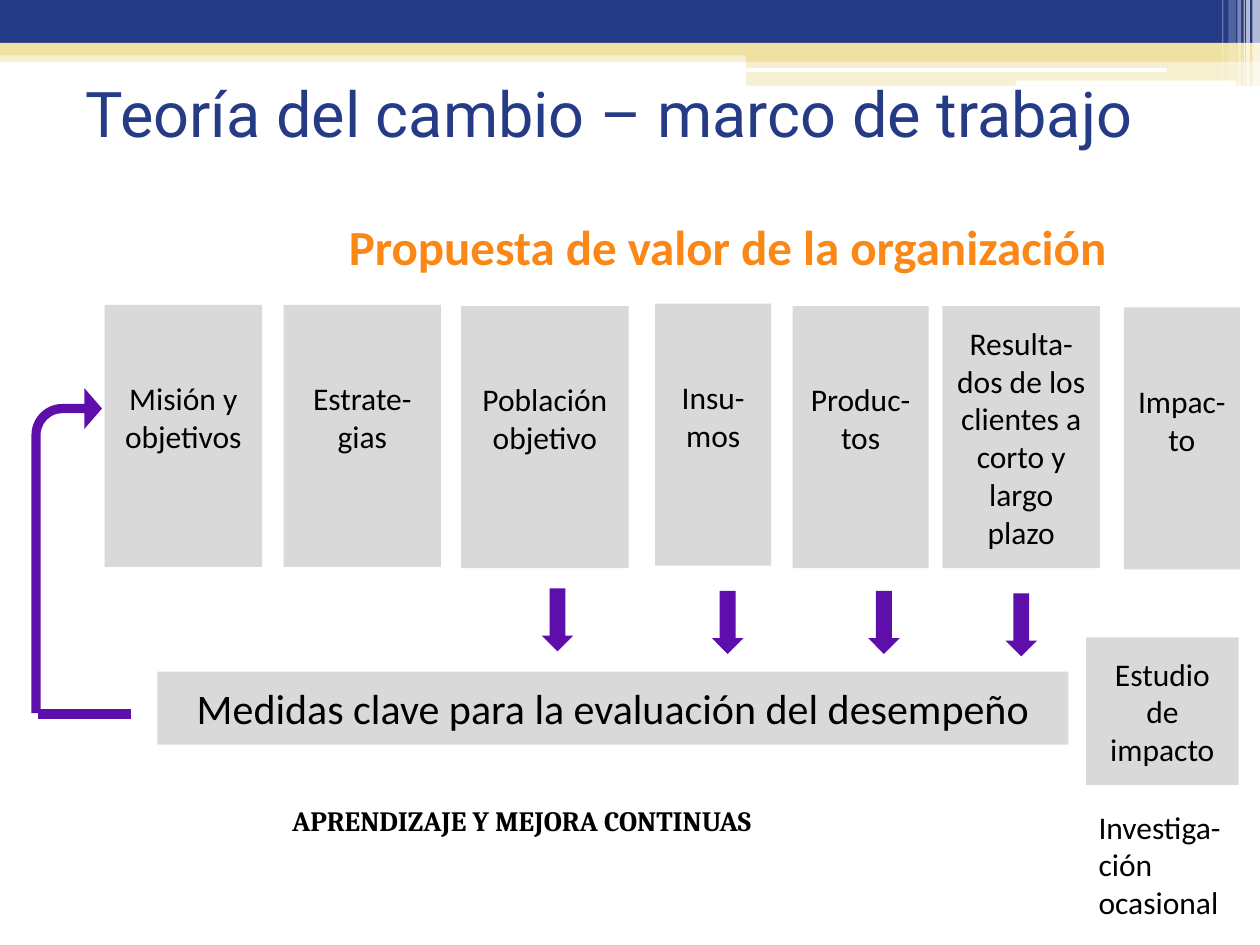
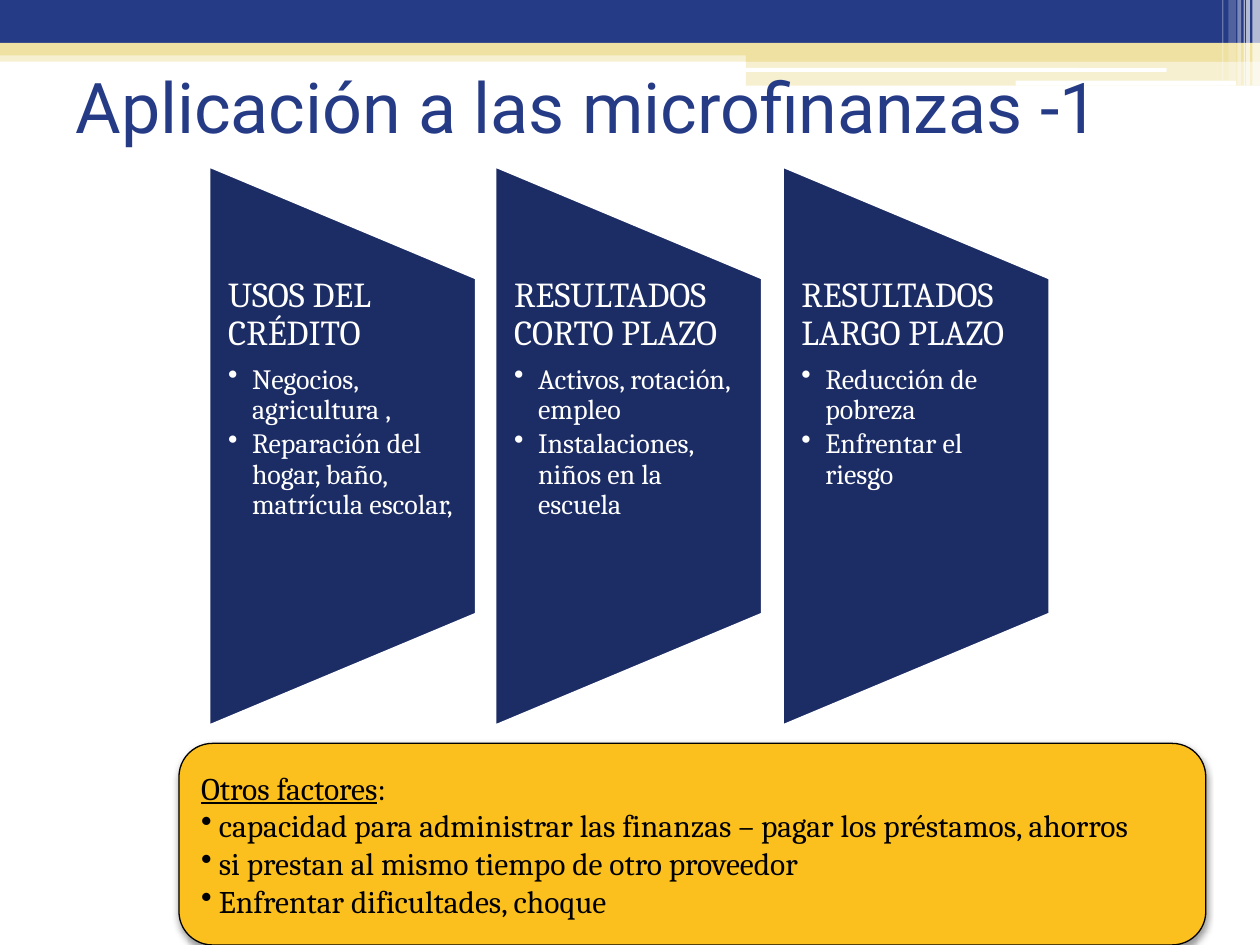
from dataclasses import dataclass

from lxml.etree import SubElement
from pptx import Presentation
from pptx.dml.color import RGBColor
from pptx.enum.shapes import MSO_SHAPE as Preset
from pptx.enum.text import MSO_ANCHOR as Anchor, MSO_AUTO_SIZE as AutoSize, PP_ALIGN as Align
from pptx.oxml.ns import qn
from pptx.util import Pt

EMU_PER_PX = 9144  # 100 px to the inch

NAVY = RGBColor(0x26, 0x3B, 0x86)
DARK_NAVY = RGBColor(0x1C, 0x2C, 0x64)
SAND = RGBColor(0xEF, 0xE1, 0xA2)
GRAY = RGBColor(0xD9, 0xD9, 0xD9)
PURPLE = RGBColor(0x5E, 0x0E, 0xAA)
ORANGE = RGBColor(0xFA, 0x87, 0x16)
AMBER = RGBColor(0xFB, 0xC0, 0x1E)
BLACK = RGBColor(0, 0, 0)
WHITE = RGBColor(0xFF, 0xFF, 0xFF)

TITLE_FONT, SANS, SERIF = "Roboto", "Calibri", "Cambria"
LINE_18PT = 30  # height of one 18 pt line


@dataclass(frozen=True)
class Box:
    left: int
    top: int
    width: int
    height: int

    def emu(self) -> list[int]:
        return [px(v) for v in (self.left, self.top, self.width, self.height)]


@dataclass(frozen=True)
class Band:
    box: Box
    color: RGBColor
    opacity: int = 100
    preset: Preset = Preset.RECTANGLE


@dataclass(frozen=True)
class Card:
    text: str
    box: Box
    size: int = 18
    lift: int = 0  # extra bottom margin that raises the text


@dataclass(frozen=True)
class Panel:
    heading: str
    points: tuple[str, ...]


BANDS = [
    Band(Box(0, 40, 1000, 9), SAND, 50),
    Band(Box(0, 0, 1000, 34), NAVY),
    Band(Box(0, 34, 1000, 10), SAND),
    Band(Box(592, 39, 408, 10), SAND),
    Band(Box(592, 48, 408, 20), SAND, 50),
    Band(Box(591, 54, 335, 3), WHITE, preset=Preset.ROUNDED_RECTANGLE),
    Band(Box(806, 64, 175, 4), WHITE, preset=Preset.ROUNDED_RECTANGLE),
    Band(Box(994, 0, 6, 68), WHITE, 65),
    Band(Box(989, 0, 3, 68), WHITE, 65),
    Band(Box(987, 0, 1, 68), WHITE, 60),
    Band(Box(982, 0, 3, 68), WHITE, 40),
    Band(Box(975, 0, 6, 64), WHITE, 20),
    Band(Box(970, 0, 1, 64), WHITE, 30),
]

CARDS = [
    Card("Misión y objetivos", Box(83, 242, 125, 208), lift=LINE_18PT),
    Card("Estrate-gias", Box(225, 242, 125, 208), lift=LINE_18PT),
    Card("Población objetivo", Box(366, 243, 133, 208), lift=LINE_18PT),
    Card("Insu-mos", Box(520, 241, 92, 208), lift=LINE_18PT),
    Card("Produc-tos", Box(629, 243, 108, 208), lift=LINE_18PT),
    Card("Resulta-dos de los clientes a corto y largo plazo", Box(748, 243, 125, 208)),
    Card("Impac-to", Box(892, 244, 92, 208), lift=LINE_18PT),
    Card("Medidas clave para la evaluación del desempeño", Box(125, 533, 723, 58), size=24),
    Card("Estudio de impacto", Box(862, 506, 121, 117)),
]

DOWN_ARROWS = [(430, 467), (565, 469), (689, 469), (798, 471)]

PANELS = [
    Panel("USOS DEL CRÉDITO",
          ("Negocios, agricultura ,", "Reparación del hogar, baño, matrícula escolar,")),
    Panel("RESULTADOS CORTO PLAZO",
          ("Activos, rotación, empleo", "Instalaciones, niños en la escuela")),
    Panel("RESULTADOS LARGO PLAZO",
          ("Reducción de pobreza", "Enfrentar el riesgo")),
]

OTHER_FACTORS = [
    "capacidad para administrar las finanzas – pagar los préstamos, ahorros",
    "si prestan al mismo tiempo de otro proveedor",
    "Enfrentar dificultades, choque",
]


def px(value: int) -> int:
    return value * EMU_PER_PX


def add_run(paragraph, text: str, font: str, size: int, color: RGBColor = BLACK, bold: bool = False):
    run = paragraph.add_run()
    run.text = text
    run.font.name, run.font.size, run.font.bold = font, Pt(size), bold
    run.font.color.rgb = color
    return run


def add_bullet(paragraph, indent: int) -> None:
    properties = paragraph._p.get_or_add_pPr()
    properties.set("marL", str(px(indent)))
    properties.set("indent", str(-px(indent)))
    SubElement(properties, qn("a:buChar"), char="•")


def add_preset(slide, preset: Preset, box: Box, color: RGBColor):
    shape = slide.shapes.add_shape(preset, *box.emu())
    shape.shadow.inherit = False
    shape.fill.solid()
    shape.fill.fore_color.rgb = color
    shape.line.fill.background()
    return shape


def add_label(slide, box: Box, text: str, font: str, size: int, color: RGBColor = BLACK,
              bold: bool = False, wrap: bool = False) -> None:
    frame = slide.shapes.add_textbox(*box.emu()).text_frame
    frame.word_wrap = wrap
    frame.auto_size = AutoSize.SHAPE_TO_FIT_TEXT
    add_run(frame.paragraphs[0], text, font, size, color, bold)


def add_card(slide, card: Card) -> None:
    frame = add_preset(slide, Preset.RECTANGLE, card.box, GRAY).text_frame
    frame.word_wrap = True
    frame.vertical_anchor = Anchor.MIDDLE
    frame.margin_bottom = px(5 + card.lift)
    paragraph = frame.paragraphs[0]
    paragraph.alignment = Align.CENTER
    add_run(paragraph, card.text, SANS, card.size)


def add_panel(slide, panel: Panel, offset: int) -> None:
    shape = add_preset(slide, Preset.FLOWCHART_MANUAL_OPERATION,
                       Box(50 + offset, 248, 444, 212), DARK_NAVY)
    shape.rotation = 270
    shape.line.color.rgb = WHITE
    shape.line.width = Pt(1.5)

    frame = slide.shapes.add_textbox(*Box(167 + offset, 220, 212, 267).emu()).text_frame
    frame.word_wrap = True
    frame.margin_left = frame.margin_right = px(14)
    frame.margin_top = frame.margin_bottom = 0
    heading = frame.paragraphs[0]
    heading.line_spacing, heading.space_after = 0.9, Pt(7)
    add_run(heading, panel.heading, SERIF, 20, WHITE)
    for point in panel.points:
        paragraph = frame.add_paragraph()
        paragraph.level = 1
        paragraph.line_spacing, paragraph.space_after = 0.9, Pt(2.4)
        add_bullet(paragraph, 19)
        add_run(paragraph, point, SERIF, 16, WHITE)


def add_soft_shadow(shape) -> None:
    effects = shape.element.spPr.find(qn("a:effectLst"))
    shadow = SubElement(effects, qn("a:outerShdw"), blurRad=str(Pt(4.1)), dist=str(Pt(2)),
                        dir="5400000", rotWithShape="0")
    color = SubElement(shadow, qn("a:srgbClr"), val=str(BLACK))
    SubElement(color, qn("a:alpha"), val="40000")


def add_other_factors(slide) -> None:
    shape = add_preset(slide, Preset.ROUNDED_RECTANGLE, Box(142, 590, 815, 160), AMBER)
    shape.line.color.rgb = BLACK
    shape.line.width = Pt(0.75)
    add_soft_shadow(shape)
    frame = shape.text_frame
    frame.word_wrap = True
    frame.vertical_anchor = Anchor.MIDDLE
    heading = frame.paragraphs[0]
    heading.alignment = Align.LEFT
    add_run(heading, "Otros factores", SERIF, 18).font.underline = True
    add_run(heading, ":", SERIF, 18)
    for factor in OTHER_FACTORS:
        paragraph = frame.add_paragraph()
        paragraph.alignment = Align.LEFT
        add_bullet(paragraph, 14)
        add_run(paragraph, factor, SERIF, 18)


def add_titled_slide(presentation, layout, title: str, box: Box, size: int):
    slide = presentation.slides.add_slide(layout)
    placeholder = slide.shapes.title
    placeholder.left, placeholder.top, placeholder.width, placeholder.height = box.emu()
    frame = placeholder.text_frame
    frame.word_wrap = True
    frame.auto_size = AutoSize.NONE
    frame.vertical_anchor = Anchor.MIDDLE
    paragraph = frame.paragraphs[0]
    paragraph.alignment = Align.LEFT
    add_run(paragraph, title, TITLE_FONT, size, NAVY)
    return slide


def move_bands_to_layout(slide, layout) -> None:
    """Draw the bands once and hand them to the layout, behind its placeholders."""
    for position, band in enumerate(BANDS, start=2):
        shape = add_preset(slide, band.preset, band.box, band.color)
        if band.opacity < 100:
            color = shape.element.spPr.find(qn("a:solidFill")).find(qn("a:srgbClr"))
            SubElement(color, qn("a:alpha"), val=str(band.opacity * 1000))
        layout.shapes.element.insert(position, shape.element)


def build_theory_slide(slide) -> None:
    add_label(slide, Box(267, 167, 629, 57), "Propuesta de valor de la organización",
              SANS, 28, ORANGE, bold=True)
    for card in CARDS:
        add_card(slide, card)
    add_label(slide, Box(222, 633, 484, 37), "APRENDIZAJE Y MEJORA CONTINUAS", SERIF, 16, bold=True)
    add_label(slide, Box(862, 636, 138, 101), "Investiga-ción ocasional", SANS, 18, wrap=True)

    # Feedback arrow and its foot
    feedback = add_preset(slide, Preset.BENT_ARROW, Box(25, 308, 56, 258), PURPLE)
    for index, value in enumerate((0.13, 0.29, 0.25, 0.44)):
        feedback.adjustments[index] = value
    add_preset(slide, Preset.MATH_MINUS, Box(17, 550, 100, 33), PURPLE)

    for left, top in DOWN_ARROWS:
        add_preset(slide, Preset.DOWN_ARROW, Box(left, top, 25, 50), PURPLE)


def build_microfinance_slide(slide) -> None:
    for index, panel in enumerate(PANELS):
        add_panel(slide, panel, index * 455 // 2)
    add_other_factors(slide)


def main() -> None:
    presentation = Presentation()
    presentation.slide_width, presentation.slide_height = px(1000), px(750)
    layout = presentation.slide_layouts[5]  # title only

    theory = add_titled_slide(presentation, layout, "Teoría del cambio – marco de trabajo",
                              Box(58, 31, 900, 117), 36)
    move_bands_to_layout(theory, layout)
    build_theory_slide(theory)

    microfinance = add_titled_slide(presentation, layout, "Aplicación a las microfinanzas -1",
                                    Box(50, 25, 900, 117), 40)
    build_microfinance_slide(microfinance)
    presentation.save("out.pptx")


if __name__ == "__main__":
    main()
